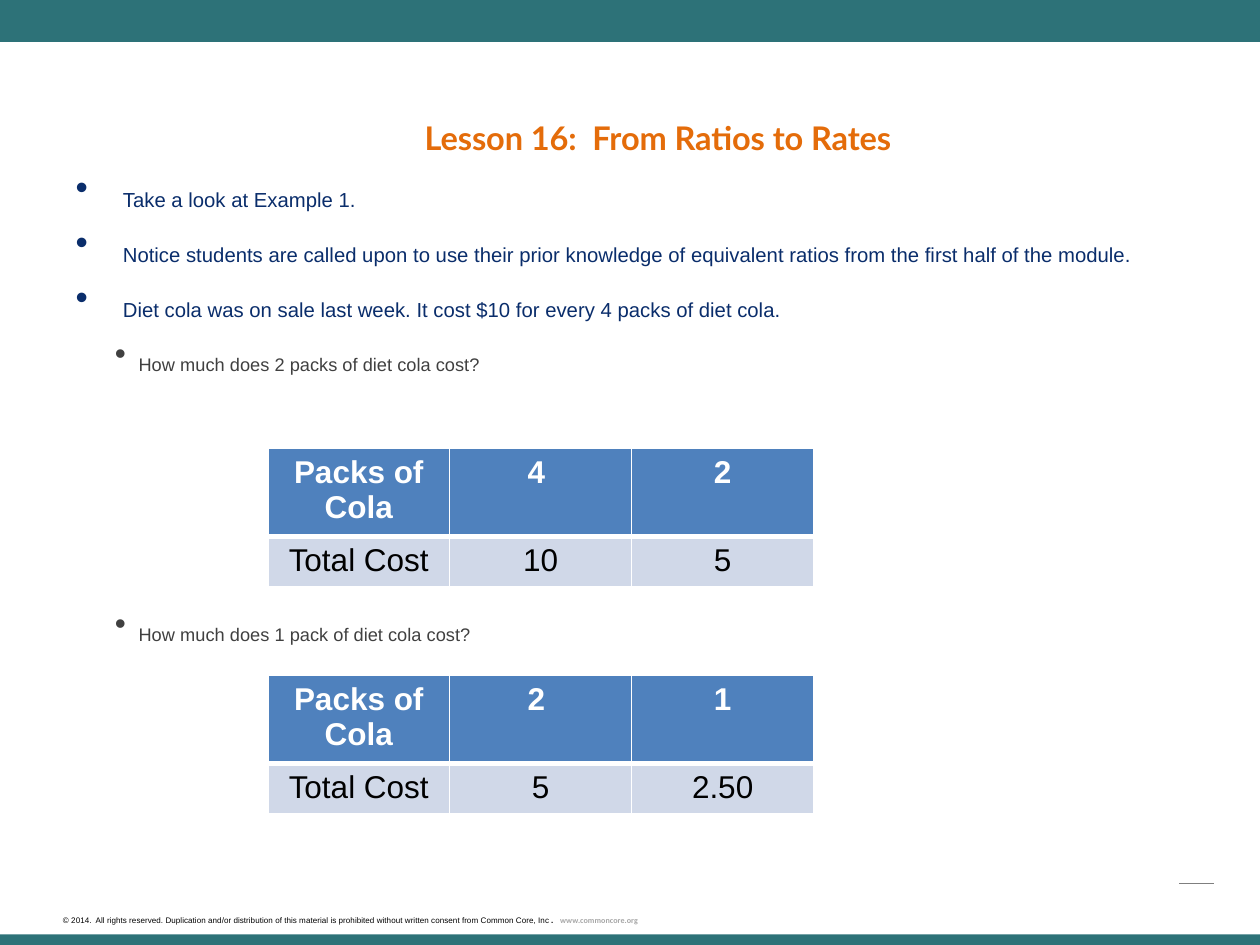
from lxml import etree
from pptx import Presentation
from pptx.dml.color import RGBColor
from pptx.enum.shapes import MSO_CONNECTOR, MSO_SHAPE
from pptx.enum.text import MSO_ANCHOR, MSO_AUTO_SIZE, PP_ALIGN
from pptx.oxml.ns import qn
from pptx.util import Pt

TEAL = RGBColor(0x2D, 0x72, 0x78)
ORANGE = RGBColor(0xE4, 0x6C, 0x0A)
NAVY = RGBColor(0x0A, 0x2D, 0x6B)
DARK_GRAY = RGBColor(0x40, 0x40, 0x40)
MID_GRAY = RGBColor(0x7F, 0x7F, 0x7F)
LIGHT_GRAY = RGBColor(0xA6, 0xA6, 0xA6)
HEADER_BLUE = RGBColor(0x4F, 0x81, 0xBD)
PALE_BLUE = RGBColor(0xD0, 0xD8, 0xE8)
WHITE = RGBColor(0xFF, 0xFF, 0xFF)
BLACK = RGBColor(0, 0, 0)
CENTER = PP_ALIGN.CENTER
TOP = MSO_ANCHOR.TOP
NO_AUTOFIT = MSO_AUTO_SIZE.NONE
RECTANGLE = MSO_SHAPE.RECTANGLE
STRAIGHT = MSO_CONNECTOR.STRAIGHT


def add_run(paragraph, text, size, color, font="Arial", bold=False, lowered=True):
    run = paragraph.add_run()
    run.text = text
    run.font.size = Pt(size)
    run.font.name = font
    run.font.bold = bold
    run.font.color.rgb = color
    if lowered:
        run.font._element.set("baseline", "-25000")


def add_border(cell, side, width):
    line = etree.SubElement(cell._tc.get_or_add_tcPr(), qn(f"a:{side}"), w=str(Pt(width)))
    fill = etree.SubElement(line, qn("a:solidFill"))
    etree.SubElement(fill, qn("a:srgbClr"), val=str(WHITE))


presentation = Presentation()
presentation.slide_width = Pt(720)
presentation.slide_height = Pt(540)
slide = presentation.slides.add_slide(presentation.slide_layouts[1])

# Top and bottom bars
for top, height in ((0, 24), (534, 12)):
    bar = slide.shapes.add_shape(RECTANGLE, 0, Pt(top), Pt(720), Pt(height))
    bar.shadow.inherit = False
    bar.fill.solid()
    bar.fill.fore_color.rgb = TEAL
    bar.line.fill.background()

# Short rule at the lower right
rule = slide.shapes.add_connector(STRAIGHT, Pt(674), Pt(504.7), Pt(694), Pt(504.7))
rule.line.color.rgb = MID_GRAY
rule.line.width = Pt(0.5)
etree.SubElement(rule._element.spPr, qn("a:effectLst"))

# Copyright line
footer = slide.shapes.add_textbox(Pt(36), Pt(517.7), Pt(435), Pt(9.4))
frame = footer.text_frame
frame.word_wrap = True
frame.margin_left = frame.margin_right = frame.margin_top = frame.margin_bottom = 0
paragraph = frame.paragraphs[0]
add_run(paragraph, "© 2014.  All rights reserved. Duplication and/or distribution of this "
        "material is prohibited without written consent from Common Core, Inc", 8, BLACK)
add_run(paragraph, ".   ", 8, BLACK, bold=True)
add_run(paragraph, "www.commoncore.org", 8, LIGHT_GRAY, font="Calibri", bold=True)

# Title
title = slide.shapes.title
title.left, title.top, title.width, title.height = Pt(52), Pt(42.5), Pt(648), Pt(65)
title.text_frame.auto_size = NO_AUTOFIT
title.text_frame.vertical_anchor = TOP
paragraph = title.text_frame.paragraphs[0]
paragraph.alignment = CENTER
add_run(paragraph, "Lesson 16:  From Ratios to Rates", 32, ORANGE, font="Lato", bold=True)

# Bulleted list: level, space before, text
bullets = [
    (0, 0, "Take a look at Example 1."),
    (0, 4, "Notice students are called upon to use their prior knowledge of "
           "equivalent ratios from the first half of the module."),
    (0, 4, "Diet cola was on sale last week. It cost $10 for every 4 packs of diet cola."),
    (1, 6, "How much does 2 packs of diet cola cost?"),
    (1, 130, "How much does 1 pack of diet cola cost?"),
]
level_styles = [(27, 27, 20, NAVY), (36, 13.5, 18, DARK_GRAY)]
body = slide.placeholders[1]
body.left, body.top, body.width, body.height = Pt(36), Pt(90), Pt(648), Pt(353.5)
frame = body.text_frame
frame.auto_size = NO_AUTOFIT
for index, (level, space, text) in enumerate(bullets):
    margin, hanging, size, color = level_styles[level]
    paragraph = frame.add_paragraph() if index else frame.paragraphs[0]
    paragraph.level = level
    paragraph.space_before = Pt(space)
    properties = paragraph._p.get_or_add_pPr()
    properties.set("marL", str(Pt(margin)))
    properties.set("indent", str(-Pt(hanging)))
    etree.SubElement(properties, qn("a:buChar"), char="•")
    add_run(paragraph, text, size, color)

# Ratio tables
ratio_tables = [
    (256.3, [["Packs of Cola", "4 ", "2"], ["Total Cost", "10", "5"]]),
    (386, [["Packs of Cola", "2 ", "1"], ["Total Cost", "5", "2.50"]]),
]
for top, rows in ratio_tables:
    table = slide.shapes.add_table(2, 3, Pt(153), Pt(top), Pt(312), Pt(54.8)).table
    for row_index, row in enumerate(rows):
        is_header = row_index == 0
        for column_index, text in enumerate(row):
            cell = table.cell(row_index, column_index)
            add_border(cell, "lnL", 1)
            add_border(cell, "lnR", 1)
            add_border(cell, "lnT", 1 if is_header else 3)
            add_border(cell, "lnB", 3 if is_header else 1)
            cell.fill.solid()
            cell.fill.fore_color.rgb = HEADER_BLUE if is_header else PALE_BLUE
            paragraph = cell.text_frame.paragraphs[0]
            paragraph.alignment = CENTER
            add_run(paragraph, text, 18, WHITE if is_header else BLACK,
                    bold=is_header, lowered=False)

presentation.save("out.pptx")
